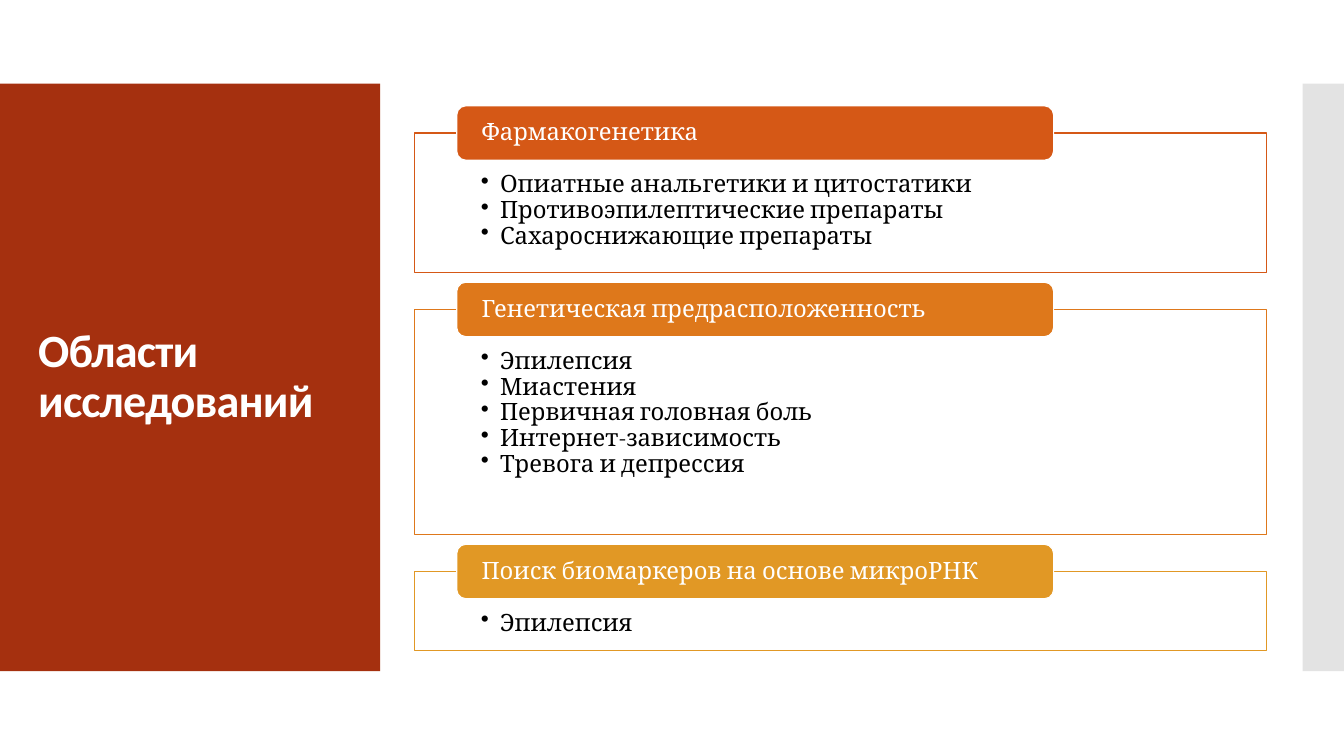
from pptx import Presentation
from pptx.dml.color import RGBColor
from pptx.enum.shapes import MSO_SHAPE
from pptx.enum.text import MSO_ANCHOR, PP_ALIGN
from pptx.oxml.xmlchemy import OxmlElement
from pptx.util import Pt

PX = 9144
THEME = {
    "title_font": "Calibri",
    "body_font": "Cambria",
    "title_size": 33,
    "body_size": 17,
    "border": 0.85,
    "panel": "A5300F",
    "strip": "C8C8C8",
    "light": "FFFFFF",
    "dark": "000000",
    "accents": ["D55816", "DE781B", "E19825"],
}


def draw(page, preset, place, fill, line=None, opacity=100):
    shape = page.shapes.add_shape(preset, *[value * PX for value in place])
    shape.shadow.inherit = False
    shape.fill.solid()
    shape.fill.fore_color.rgb = RGBColor.from_string(fill)
    if opacity < 100:
        color = shape.fill._xPr.find(".//{*}srgbClr")
        alpha = OxmlElement("a:alpha")
        alpha.set("val", str(opacity * 1000))
        color.append(alpha)
    if line:
        shape.line.color.rgb = RGBColor.from_string(line)
        shape.line.width = Pt(THEME["border"])
    else:
        shape.line.fill.background()
    return shape


def write(box, lines, *, font, size, color, insets, anchor=MSO_ANCHOR.MIDDLE,
          bold=False, spacing=0, bullet_indent=0):
    frame = box.text_frame
    frame.word_wrap = True
    frame.vertical_anchor = anchor
    left, top, right, bottom = [value * PX for value in insets]
    frame.margin_left, frame.margin_right = left, right
    frame.margin_top, frame.margin_bottom = top, bottom
    for index, text in enumerate(lines):
        para = frame.paragraphs[0] if index == 0 else frame.add_paragraph()
        para.alignment = PP_ALIGN.LEFT
        para.line_spacing = 0.9
        if bullet_indent:
            properties = para._p.get_or_add_pPr()
            properties.set("marL", str(bullet_indent * PX))
            properties.set("indent", str(-bullet_indent * PX))
            bullet = OxmlElement("a:buChar")
            bullet.set("char", "•")
            properties.append(bullet)
        span = para.add_run()
        span.text = text
        span.font.name = font
        span.font.size = Pt(size)
        span.font.bold = bold
        span.font.color.rgb = RGBColor.from_string(color)
        if spacing:
            span.font._element.set("spc", str(spacing))


deck = Presentation()
deck.slide_width = 1333 * PX
deck.slide_height = 750 * PX
page = deck.slides.add_slide(deck.slide_layouts[6])

draw(page, MSO_SHAPE.RECTANGLE, (0, 83, 377, 583), THEME["panel"])
draw(page, MSO_SHAPE.RECTANGLE, (1292, 83, 41, 583), THEME["strip"], opacity=50)

title = page.shapes.add_textbox(*[value * PX for value in (28, 123, 322, 503)])
write(title, ["Области исследований"], font=THEME["title_font"],
      size=THEME["title_size"], color=THEME["light"], insets=(10, 5, 10, 5),
      bold=True, spacing=-60)

areas = [
    ("Фармакогенетика", 138, [
        "Опиатные анальгетики и цитостатики",
        "Противоэпилептические препараты",
        "Сахароснижающие препараты",
    ]),
    ("Генетическая предрасположенность", 223, [
        "Эпилепсия",
        "Миастения",
        "Первичная головная боль",
        "Интернет-зависимость",
        "Тревога и депрессия",
    ]),
    ("Поиск биомаркеров на основе микроРНК", 78, ["Эпилепсия"]),
]
frame_top = 132
frame_gap = 37
header_rise = 27

for (heading, height, topics), accent in zip(areas, THEME["accents"]):
    topic_box = draw(page, MSO_SHAPE.RECTANGLE, (411, frame_top, 845, height),
                     THEME["light"], accent, opacity=90)
    write(topic_box, topics, font=THEME["body_font"], size=THEME["body_size"],
          color=THEME["dark"], insets=(66, 39, 66, 13),
          anchor=MSO_ANCHOR.TOP, bullet_indent=19)
    header = draw(page, MSO_SHAPE.ROUNDED_RECTANGLE,
                  (453, frame_top - header_rise, 592, 54), accent, THEME["light"])
    write(header, [heading], font=THEME["body_font"], size=THEME["body_size"],
          color=THEME["light"], insets=(22, 0, 22, 0))
    frame_top += height + frame_gap

deck.save("out.pptx")
